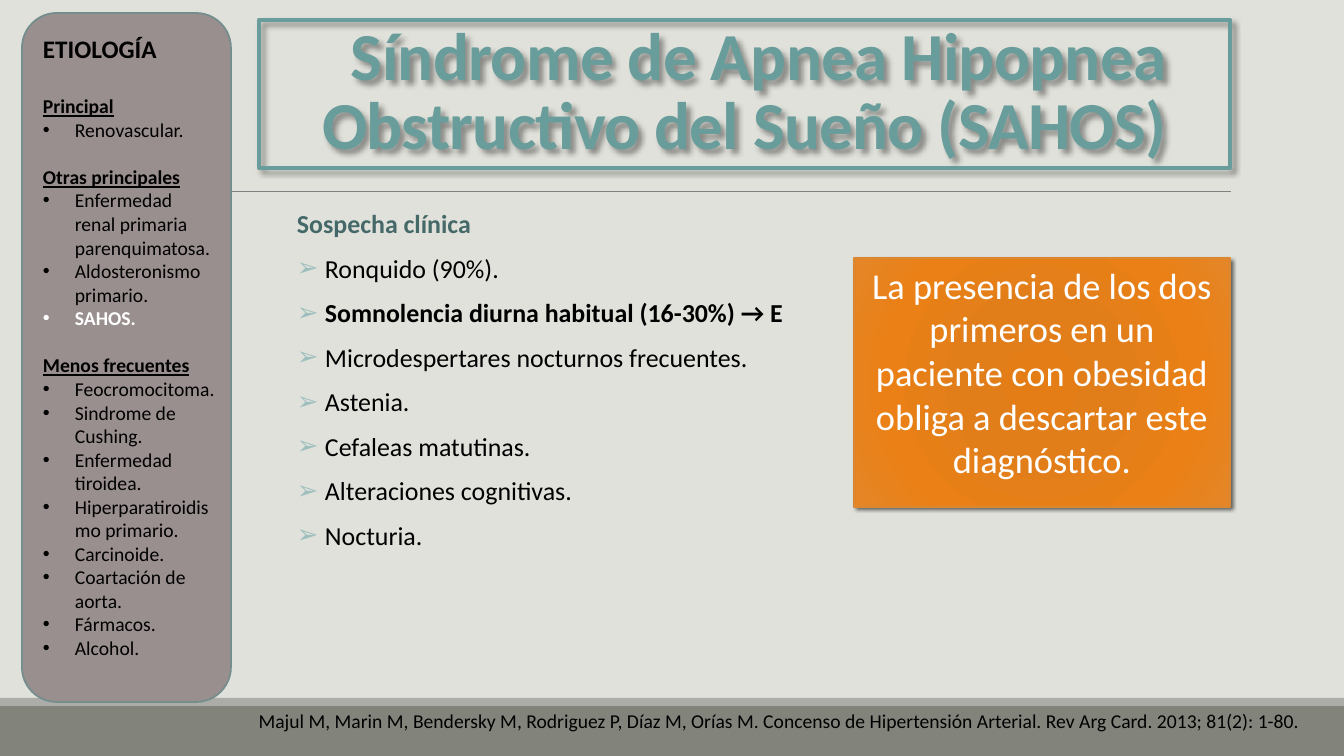
import pptx
import pptx.util
import pptx.oxml
import pptx.oxml.ns
import pptx.dml.color
import pptx.enum.text
import pptx.enum.shapes

SCALE = 914400 / 100.8
COLORS = {
    "paper": "E1E1DB", "base": "82847C", "band": "ACADA8", "rule": "808080",
    "teal": "689D9B", "deep": "456968", "pale": "9DBFBE", "side": "9A8F8F",
    "edge": "748D8D", "rust": "DB8631", "black": "000000", "white": "FFFFFF",
}
ALIGN = pptx.enum.text.PP_ALIGN
KIND = pptx.enum.shapes.MSO_SHAPE
NS = pptx.oxml.ns.nsdecls("a")


def px(*nums):
    return [pptx.util.Emu(round(num * SCALE)) for num in nums]


def write(frame, text, size=14, color="black", bold=False, under=False, align=ALIGN.LEFT,
          mark=None, tint="black", left=0, first=0, line=None, before=0, after=0, track=0):
    frame.word_wrap = True
    para = frame.paragraphs[0] if not frame.text else frame.add_paragraph()
    props = para._p.get_or_add_pPr()
    props.set("marL", str(px(left)[0]))
    props.set("indent", str(px(first)[0]))
    if mark:
        for xml in (f'<a:buClr {NS}><a:srgbClr val="{COLORS[tint]}"/></a:buClr>',
                    f'<a:buFont {NS} typeface="Arial"/>',
                    f'<a:buChar {NS} char="{mark}"/>'):
            props.append(pptx.oxml.parse_xml(xml))
    para.alignment = align
    para.line_spacing = line
    para.space_before = pptx.util.Pt(before)
    para.space_after = pptx.util.Pt(after)
    run = para.add_run()
    run.text = text
    font = run.font
    font.name = "Calibri"
    font.size = pptx.util.Pt(size)
    font.bold = bold
    font.underline = under
    font.color.rgb = pptx.dml.color.RGBColor.from_string(COLORS[color])
    if track:
        run._r.get_or_add_rPr().set("spc", str(track))


deck = pptx.Presentation()
deck.slide_width, deck.slide_height = px(1344, 756)
slide = deck.slides.add_slide(deck.slide_layouts[6])
slide.background.fill.solid()
slide.background.fill.fore_color.rgb = pptx.dml.color.RGBColor.from_string(COLORS["paper"])
shapes = slide.shapes

rule = shapes.add_connector(pptx.enum.shapes.MSO_CONNECTOR.STRAIGHT, *px(132, 191, 1231, 191))
rule.line.color.rgb = pptx.dml.color.RGBColor.from_string(COLORS["rule"])
rule.line.width = pptx.util.Pt(0.5)
rule._element.spPr.append(pptx.oxml.parse_xml(f"<a:effectLst {NS}/>"))

blocks = {}
for name, kind, place, fill, edge, width, shade in (
    ("base", KIND.RECTANGLE, (0, 706, 1344, 50), "base", None, 0, None),
    ("band", KIND.RECTANGLE, (0, 698, 1344, 8), "band", None, 0, None),
    ("title", KIND.RECTANGLE, (259, 20, 971, 148), None, "teal", 3, (40, 4, 3)),
    ("side", KIND.ROUNDED_RECTANGLE, (22, 13, 209, 689), "side", "edge", 1.25, None),
    ("note", KIND.RECTANGLE, (854, 258, 376, 249), "rust", "rust", 1, (60, 3, 2)),
):
    block = blocks[name] = shapes.add_shape(kind, *px(*place))
    block.shadow.inherit = False
    if fill:
        block.fill.solid()
        block.fill.fore_color.rgb = pptx.dml.color.RGBColor.from_string(COLORS[fill])
    else:
        block.fill.background()
    if edge:
        block.line.color.rgb = pptx.dml.color.RGBColor.from_string(COLORS[edge])
        block.line.width = pptx.util.Pt(width)
    else:
        block.line.fill.background()
    if shade:
        alpha, blur, dist = shade
        block._element.spPr.find(pptx.oxml.ns.qn("a:effectLst")).append(pptx.oxml.parse_xml(
            f'<a:outerShdw {NS} blurRad="{blur * 12700}" dist="{dist * 12700}" dir="2700000" '
            f'algn="tl" rotWithShape="0"><a:srgbClr val="{COLORS["black"]}">'
            f'<a:alpha val="{alpha * 1000}"/></a:srgbClr></a:outerShdw>'))

stops = "".join(
    f'<a:gs pos="{spot * 1000}"><a:srgbClr val="{tone}"/></a:gs>'
    for spot, tone in ((0, "E47D16"), (34, "E27E1A"), (70, "EA8016"), (100, "E48628")))
props = blocks["note"]._element.spPr
props.replace(props.find(pptx.oxml.ns.qn("a:solidFill")), pptx.oxml.parse_xml(
    f'<a:gradFill {NS} rotWithShape="1"><a:gsLst>{stops}</a:gsLst><a:path path="circle">'
    '<a:fillToRect l="100000" t="100000" r="100000" b="100000"/></a:path></a:gradFill>'))

title = blocks["title"].text_frame
title.vertical_anchor = pptx.enum.text.MSO_ANCHOR.BOTTOM
write(title, "Síndrome de Apnea Hipopnea Obstructivo del Sueño (SAHOS)", size=48,
      color="teal", bold=True, align=ALIGN.CENTER, first=28, line=0.85, track=-50)

note = blocks["note"].text_frame
note.vertical_anchor = pptx.enum.text.MSO_ANCHOR.TOP
write(note, "La presencia de los dos primeros en un paciente con obesidad obliga a descartar "
      "este diagnóstico.", size=26, color="white", align=ALIGN.CENTER)

cite = shapes.add_textbox(*px(230, 704, 1099, 57 - 5)).text_frame
write(cite, "Majul M, Marin M, Bendersky M, Rodriguez P, Díaz M, Orías M. Concenso de "
      "Hipertensión Arterial. Rev Arg Card. 2013; 81(2): 1-80.", align=ALIGN.CENTER)

body = shapes.add_textbox(*px(297, 209, 731, 352)).text_frame
body.margin_left = body.margin_right = 0
write(body, "Sospecha clínica", size=18.5, color="deep", bold=True, line=0.8, after=2)
for sign in (
    "Ronquido (90%).",
    "Somnolencia diurna habitual (16-30%) → E",
    "Microdespertares nocturnos frecuentes.",
    "Astenia.",
    "Cefaleas matutinas.",
    "Alteraciones cognitivas.",
    "Nocturia.",
):
    write(body, sign, size=18.5, bold=sign.startswith("Somnolencia"), mark="➢", tint="pale",
          left=28, first=-28, line=0.8, before=12, after=2)

menu = shapes.add_textbox(*px(33, 28, 192, 713)).text_frame
write(menu, "ETIOLOGÍA", size=18, bold=True)
for head, gap, items in (
    ("Principal", 22, ("Renovascular.",)),
    ("Otras principales", 17, ("Enfermedad renal primaria parenquimatosa.",
                               "Aldosteronismo primario.", "SAHOS.")),
    ("Menos frecuentes", 17, ("Feocromocitoma.", "Sindrome de Cushing.",
                              "Enfermedad tiroidea.", "Hiperparatiroidismo primario.",
                              "Carcinoide.", "Coartación de aorta.", "Fármacos.", "Alcohol.")),
):
    write(menu, head, bold=True, under=True, before=gap)
    for item in items:
        here = item == "SAHOS."
        tone = "white" if here else "black"
        write(menu, item, color=tone, bold=here, mark="•", tint=tone, left=32, first=-32)

deck.save("out.pptx")
